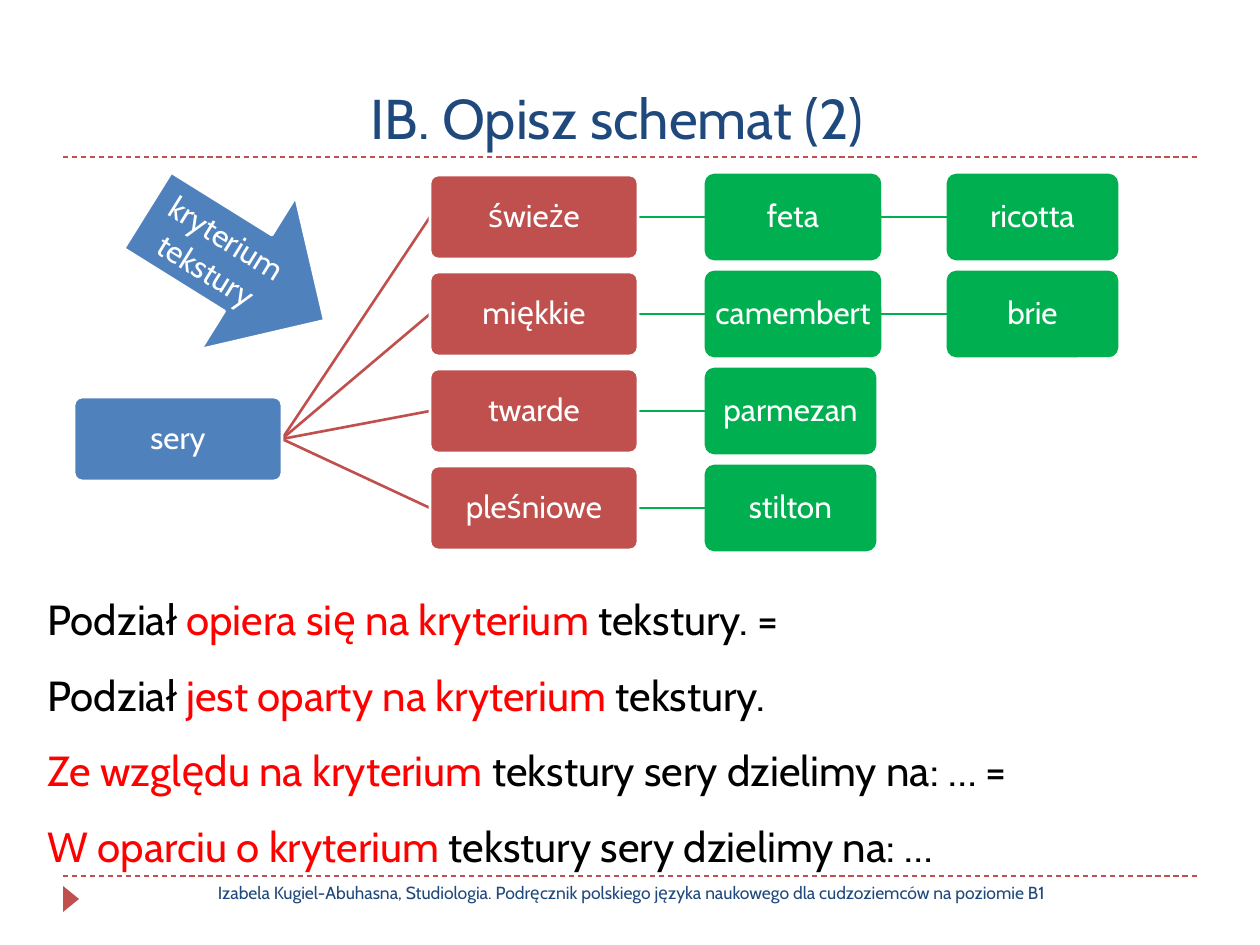
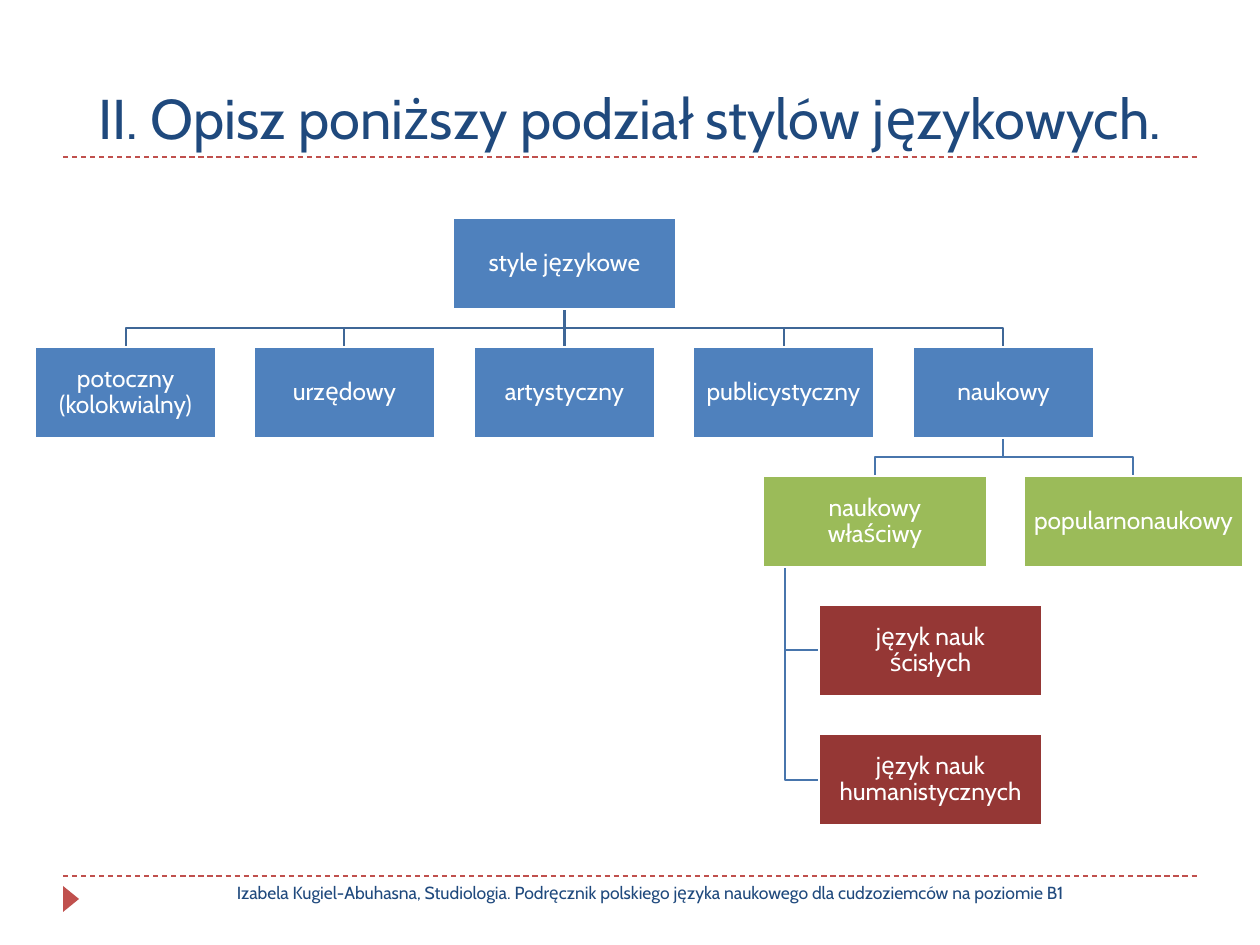
from lxml import etree
from pptx import Presentation
from pptx.dml.color import RGBColor
from pptx.enum.dml import MSO_LINE
from pptx.enum.shapes import MSO_CONNECTOR, MSO_SHAPE
from pptx.enum.text import MSO_ANCHOR, MSO_AUTO_SIZE, PP_ALIGN
from pptx.oxml.ns import qn
from pptx.util import Emu, Pt

PX = 914400 / 126
FONT = "Cabin"
COLORS = {
    "title": "1F497D",
    "accent": "C0504D",
    "blue": "4F81BD",
    "green": "00B050",
    "olive": "9BBB59",
    "maroon": "953735",
    "branch": "3F6797",
    "twig": "4875AC",
    "white": "FFFFFF",
    "black": "000000",
    "red": "FF0000",
}
FOOTER = ("Izabela Kugiel-Abuhasna, Studiologia. Podręcznik polskiego języka "
          "naukowego dla cudzoziemców na poziomie B1")

STRAIGHT = MSO_CONNECTOR.STRAIGHT
RECT = MSO_SHAPE.RECTANGLE
ROUNDED = MSO_SHAPE.ROUNDED_RECTANGLE
ARROW = MSO_SHAPE.RIGHT_ARROW
TRIANGLE = MSO_SHAPE.ISOSCELES_TRIANGLE
CENTER, LEFT = PP_ALIGN.CENTER, PP_ALIGN.LEFT
MIDDLE, BOTTOM = MSO_ANCHOR.MIDDLE, MSO_ANCHOR.BOTTOM
SIDE_TOP, SIDE_LEFT, SIDE_BOTTOM, SIDE_RIGHT = range(4)

CHEESES = [
    ("świeże", ["feta", "ricotta"]),
    ("miękkie", ["camembert", "brie"]),
    ("twarde", ["parmezan"]),
    ("pleśniowe", ["stilton"]),
]
SENTENCES = [
    [("Podział ", "black"), ("opiera się na kryterium ", "red"), ("tekstury. =", "black")],
    [("Podział ", "black"), ("jest oparty na kryterium ", "red"), ("tekstury.", "black")],
    [("Ze względu na kryterium ", "red"), ("tekstury sery dzielimy na: … =", "black")],
    [("W oparciu o kryterium ", "red"), ("tekstury sery dzielimy na: …", "black")],
]
STYLES = ["potoczny (kolokwialny)", "urzędowy", "artystyczny", "publicystyczny", "naukowy"]


def px(length):
    return Emu(round(length * PX))


def color(name):
    return RGBColor.from_string(COLORS[name])


def format_span(span, size, color_name):
    span.font.name = FONT
    span.font.size = Pt(size)
    span.font.color.rgb = color(color_name)


def write(shape, text, size, color_name, spacing=1.0):
    """Set centred text in one style."""
    frame = shape.text_frame
    frame.text = text
    frame.word_wrap = True
    for para in frame.paragraphs:
        para.alignment = CENTER
        para.line_spacing = spacing
        for span in para.runs:
            format_span(span, size, color_name)


def add_filled(page, kind, area, fill, line=None):
    shape = page.shapes.add_shape(kind, *map(px, area))
    shape.shadow.inherit = False
    shape.fill.solid()
    shape.fill.fore_color.rgb = color(fill)
    if line:
        shape.line.color.rgb = color(line)
        shape.line.width = Pt(1.5)
    else:
        shape.line.fill.background()
    return shape


def add_box(page, kind, area, text, size, fill, line="white"):
    box = add_filled(page, kind, area, fill, line)
    if kind == ROUNDED:
        box.adjustments[0] = 0.1
    write(box, text, size, "white", 0.9)
    frame = box.text_frame
    frame.vertical_anchor = MIDDLE
    frame.margin_left = frame.margin_right = px(1)
    frame.margin_top = frame.margin_bottom = px(1)
    return box


def add_line(page, start, end, color_name, width=1.5):
    line = page.shapes.add_connector(STRAIGHT, *map(px, start + end))
    line.line.color.rgb = color(color_name)
    line.line.width = Pt(width)
    etree.SubElement(line.element.spPr, qn("a:effectLst"))
    return line


def send_back(page, shape):
    page.shapes.element.insert(2, shape.element)


def join(page, first, first_side, second, second_side, color_name):
    line = add_line(page, (0, 0), (1, 1), color_name)
    line.begin_connect(first, first_side)
    line.end_connect(second, second_side)
    send_back(page, line)


def add_elbow(page, points, color_name):
    builder = page.shapes.build_freeform(*points[0], scale=PX)
    builder.add_line_segments(points[1:], close=False)
    elbow = builder.convert_to_shape()
    elbow.shadow.inherit = False
    elbow.fill.background()
    elbow.line.color.rgb = color(color_name)
    elbow.line.width = Pt(1.5)
    send_back(page, elbow)


def branch_down(page, parent, child, color_name):
    """Link the bottom of parent to the top of child by a bent line."""
    start_x = (parent.left + parent.width / 2) / PX
    end_x = (child.left + child.width / 2) / PX
    start_y = (parent.top + parent.height) / PX
    end_y = child.top / PX
    middle_y = (start_y + end_y) / 2
    points = [(start_x, start_y), (start_x, middle_y), (end_x, middle_y), (end_x, end_y)]
    add_elbow(page, points, color_name)


def decorate_layout(layout, page):
    """Draw the shared rules and marker on page, then move them to its layout."""
    marks = [add_line(page, (63, y), (1197, y), "accent", 0.75) for y in (876, 157)]
    for rule in marks:
        rule.line.dash_style = MSO_LINE.DASH
    marker = add_filled(page, TRIANGLE, (58, 891, 26, 16), "accent")
    marker.rotation = 90
    for mark in marks + [marker]:
        layout.shapes.element.append(mark.element)


def add_page(deck, layout, title, title_left, footer_left, footer_width):
    page = deck.slides.add_slide(layout)
    heading = page.shapes.title
    heading.left, heading.top = px(title_left), px(21)
    heading.width, heading.height = px(1134), px(136)
    write(heading, title, 32, "title")
    heading.text_frame.vertical_anchor = BOTTOM
    heading.text_frame.auto_size = MSO_AUTO_SIZE.NONE
    footer = page.shapes.add_textbox(*map(px, (footer_left, 876, footer_width, 50)))
    write(footer, FOOTER, 10, "title")
    return page


def add_sentences(page):
    frame = page.shapes.add_textbox(*map(px, (35, 562, 1189, 309))).text_frame
    frame.word_wrap = True
    for index, sentence in enumerate(SENTENCES):
        para = frame.add_paragraph() if index else frame.paragraphs[0]
        para.alignment = LEFT
        para.line_spacing = 1.5
        for text, color_name in sentence:
            span = para.add_run()
            span.text = text
            format_span(span, 24, color_name)


def fill_cheese_page(page):
    add_sentences(page)
    root = add_box(page, ROUNDED, (74, 397, 208, 84), "sery", 18, "blue")
    for row, (texture, examples) in enumerate(CHEESES):
        top = 175 + 97 * row
        group = add_box(page, ROUNDED, (430, top, 208, 84), texture, 18, "accent")
        join(page, root, SIDE_RIGHT, group, SIDE_LEFT, "accent")
        previous = group
        for column, example in enumerate(examples):
            width = 174 if column < len(examples) - 1 else 169
            area = (706 + 242 * column, top, width, 84)
            box = add_box(page, ROUNDED, area, example, 18, "green", "green")
            join(page, previous, SIDE_RIGHT, box, SIDE_LEFT, "green")
            previous = box
    arrow = add_filled(page, ARROW, (132, 176, 208, 179), "blue", "white")
    arrow.rotation = 31.9
    write(arrow, "kryterium\ntekstury", 18, "white")
    arrow.text_frame.vertical_anchor = MIDDLE


def fill_style_page(page):
    def add_node(left, level, width, text, fill):
        return add_box(page, RECT, (left, 218 + 129 * level, width, 91), text, 14, fill)

    root = add_node(453, 0, 223, "style językowe", "blue")
    styles = [add_node(35 + 439 * column // 2, 1, 181, text, "blue")
              for column, text in enumerate(STYLES)]
    middle = styles[len(styles) // 2]
    for style in styles:
        if style is middle:
            join(page, root, SIDE_BOTTOM, style, SIDE_TOP, "branch")
        else:
            branch_down(page, root, style, "branch")

    proper = add_node(763, 2, 224, "naukowy\vwłaściwy", "olive")
    popular = add_node(1024, 2, 219, "popularnonaukowy", "olive")
    for kind in (proper, popular):
        branch_down(page, styles[-1], kind, "twig")

    for level, text in enumerate(["język nauk\vścisłych", "język nauk humanistycznych"], 3):
        box = add_node(819, level, 223, text, "maroon")
        middle_y = (box.top + box.height / 2) / PX
        add_elbow(page, [(785, 567), (785, middle_y), (819, middle_y)], "twig")


def main():
    deck = Presentation()
    deck.slide_width, deck.slide_height = px(1260), px(945)
    layout = deck.slide_layouts.get_by_name("Title Only")
    cheese_page = add_page(deck, layout, "IB. Opisz schemat (2)", 50, 105, 1052)
    decorate_layout(layout, cheese_page)
    fill_cheese_page(cheese_page)
    style_page = add_page(deck, layout, "II. Opisz poniższy podział stylów językowych.",
                          63, 134, 1032)
    fill_style_page(style_page)
    deck.save("out.pptx")


if __name__ == "__main__":
    main()
